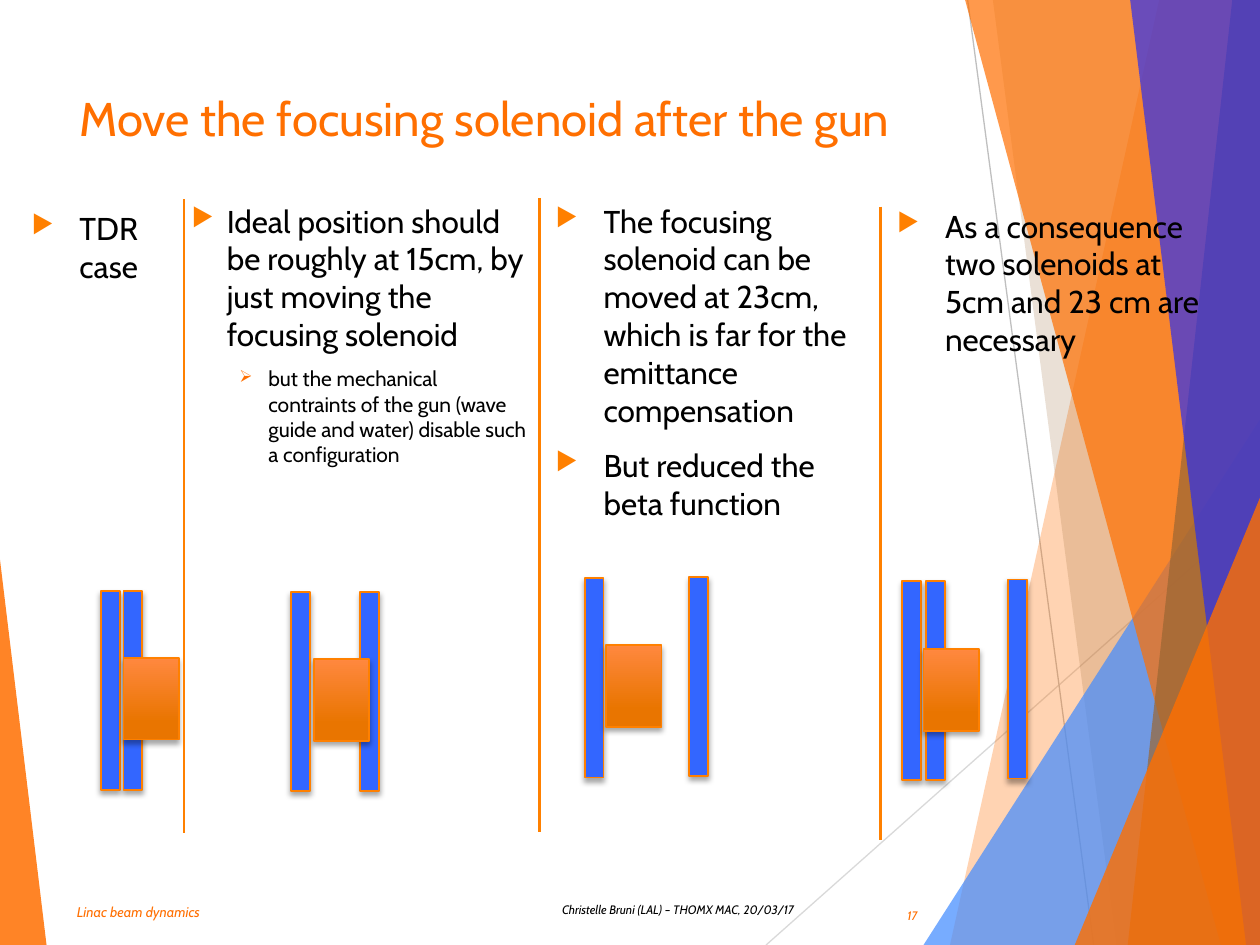
from lxml.etree import SubElement
from pptx import Presentation
from pptx.dml.color import RGBColor
from pptx.enum.shapes import MSO_CONNECTOR, MSO_SHAPE
from pptx.enum.text import MSO_ANCHOR, PP_ALIGN
from pptx.oxml.ns import qn
from pptx.util import Inches, Pt

COLUMNS, ROWS = 100, 75
BLACK = RGBColor(0x00, 0x00, 0x00)
ORANGE = RGBColor(0xFF, 0x6F, 0x00)
ACCENT = RGBColor(0xFF, 0x80, 0x00)
BROWN = RGBColor(0x99, 0x66, 0x33)
SKY = RGBColor(0x43, 0x8C, 0xFF)
INDIGO = RGBColor(0x1F, 0x29, 0xFD)
COIL_BLUE = RGBColor(0x33, 0x66, 0xFF)
GUN_TOP = RGBColor(0xFF, 0x88, 0x3F)
GUN_BOTTOM = RGBColor(0xE9, 0x75, 0x00)
LIGHT_GREY = RGBColor(0xD9, 0xD9, 0xD9)
GREY = RGBColor(0xBF, 0xBF, 0xBF)

# Decorative facets: colour, opacity in percent, corners in grid units
FACETS = [
    (ORANGE, 30, [(92, 0), (75.4, 75), (100, 75), (100, 0)]),
    (BROWN, 20, [(78.8, 0), (88.6, 75), (100, 75), (100, 0)]),
    (SKY, 72, [(73.3, 75), (100, 33.3), (100, 75)]),
    (ORANGE, 70, [(76.6, 0), (96.9, 75), (100, 75), (100, 0)]),
    (BROWN, 70, [(97.8, 0), (89.5, 75), (100, 75), (100, 0)]),
    (INDIGO, 65, [(89.7, 0), (98.9, 75), (100, 75), (100, 0)]),
    (ORANGE, 80, [(85.3, 75), (100, 39.5), (100, 75)]),
    (ORANGE, 85, [(0, 44.4), (3.7, 75), (0, 75)]),
]

# Bullet: sign, colour, text size, left edge, hanging indent, space before
MAIN = ("▶", ACCENT, 18, 3.8, 3.8, 10)
TIGHT = ("▶", ACCENT, 18, 2.8, 2.8, 7.5)
DETAIL = ("➢", ORANGE, 12, 6.1, 2.3, 7.5)

# Panels: text frame, bullets, coil corners, gun corner
PANELS = [
    ((1.8, 16.2, 14.1, 26.4), [(MAIN, "TDR case")],
     [(8, 46.9), (9.8, 46.9)], (9.8, 52.2)),
    ((14.5, 15.6, 28.1, 28.3),
     [(TIGHT, "Ideal position should be roughly at 15cm, by just moving the "
              "focusing solenoid"),
      (DETAIL, "but the mechanical contraints of the gun (wave guide and water) "
               "disable such a configuration")],
     [(23.1, 47), (28.6, 47)], (24.9, 52.3)),
    ((43.4, 15.6, 26.1, 26),
     [(MAIN, "The focusing solenoid can be moved at 23cm, which is far for the "
             "emittance compensation"),
      (MAIN, "But reduced the beta function")],
     [(46.4, 45.9), (54.7, 45.8)], (48.1, 51.2)),
    ((70.5, 16, 26.1, 26),
     [(MAIN, "As a consequence two solenoids at 5cm and 23 cm are necessary")],
     [(71.6, 46.1), (73.5, 46.1), (80, 46)], (73.3, 51.5)),
]
DIVIDERS = [(14.6, 15.8), (42.8, 15.7), (69.9, 16.4)]
DIVIDER_HEIGHT = 50.3
COIL_SIZE = (1.5, 15.8)
GUN_SIZE = (4.4, 6.5)


class SlideBuilder:
    font = "Cabin"

    def __init__(self, presentation):
        self.slide = presentation.slides.add_slide(presentation.slide_layouts[6])
        self.shapes = self.slide.shapes
        self.column = presentation.slide_width / COLUMNS
        self.row = presentation.slide_height / ROWS

    def grid(self, *lengths):
        """Turn alternating column and row lengths into EMU."""
        units = (self.column, self.row)
        return [round(length * units[i % 2]) for i, length in enumerate(lengths)]

    def line(self, start, end, color, width):
        connector = self.shapes.add_connector(
            MSO_CONNECTOR.STRAIGHT, *self.grid(*start, *end))
        connector.line.color.rgb = color
        connector.line.width = Pt(width)
        SubElement(connector._element.spPr, qn("a:effectLst"))

    def facet(self, color, opacity, corners):
        points = [self.grid(*corner) for corner in corners]
        builder = self.shapes.build_freeform(*points[0])
        builder.add_line_segments(points[1:], close=True)
        shape = builder.convert_to_shape()
        shape.shadow.inherit = False
        shape.line.fill.background()
        shape.fill.solid()
        shape.fill.fore_color.rgb = color
        color_node = shape._element.spPr.find(".//" + qn("a:srgbClr"))
        SubElement(color_node, qn("a:alpha"), val=str(opacity * 1000))

    def block(self, corner, size):
        """Add an outlined rectangle with a soft shadow below it."""
        shape = self.shapes.add_shape(MSO_SHAPE.RECTANGLE, *self.grid(*corner, *size))
        shape.line.color.rgb = ACCENT
        shape.line.width = Pt(1)
        shape.shadow.inherit = False
        effects = shape._element.spPr.find(qn("a:effectLst"))
        shadow = SubElement(effects, qn("a:outerShdw"), blurRad=str(Pt(3)),
                            dist=str(Pt(2)), dir="5400000", rotWithShape="0")
        color = SubElement(shadow, qn("a:srgbClr"), val=str(BLACK))
        SubElement(color, qn("a:alpha"), val="35000")
        return shape

    def coil(self, corner):
        shape = self.block(corner, COIL_SIZE)
        shape.fill.solid()
        shape.fill.fore_color.rgb = COIL_BLUE

    def gun(self, corner):
        fill = self.block(corner, GUN_SIZE).fill
        fill.gradient()
        fill.gradient_angle = 270
        stops = zip(fill.gradient_stops, (0, 0.78), (GUN_TOP, GUN_BOTTOM))
        for stop, position, color in stops:
            stop.position = position
            stop.color.rgb = color

    def frame(self, box, anchor=MSO_ANCHOR.TOP):
        text_frame = self.shapes.add_textbox(*self.grid(*box)).text_frame
        text_frame.word_wrap = True
        text_frame.vertical_anchor = anchor
        text_frame.margin_left = text_frame.margin_right = Inches(0.07)
        text_frame.margin_top = text_frame.margin_bottom = Inches(0.04)
        return text_frame

    def run(self, paragraph, text, size, color, italic=False):
        run = paragraph.add_run()
        run.text = text
        run.font.name = self.font
        run.font.size = Pt(size)
        run.font.color.rgb = color
        run.font.italic = italic

    def label(self, box, text, size, color=ORANGE, italic=True,
              align=PP_ALIGN.LEFT, anchor=MSO_ANCHOR.TOP):
        paragraph = self.frame(box, anchor).paragraphs[0]
        paragraph.alignment = align
        self.run(paragraph, text, size, color, italic)

    def bullets(self, box, items):
        text_frame = self.frame(box)
        for index, (style, text) in enumerate(items):
            sign, color, size, left, hanging, space = style
            paragraph = text_frame.add_paragraph() if index else text_frame.paragraphs[0]
            if index:
                paragraph.space_before = Pt(space)
            paragraph.level = 1 if style is DETAIL else 0
            properties = paragraph._p.get_or_add_pPr()
            properties.set("marL", str(self.grid(left)[0]))
            properties.set("indent", str(self.grid(-hanging)[0]))
            bullet_color = SubElement(properties, qn("a:buClr"))
            SubElement(bullet_color, qn("a:srgbClr"), val=str(color))
            SubElement(properties, qn("a:buSzPct"), val="80000")
            SubElement(properties, qn("a:buChar"), char=sign)
            self.run(paragraph, text, size, BLACK)


def main():
    presentation = Presentation()
    presentation.slide_width, presentation.slide_height = Inches(10), Inches(7.5)
    slide = SlideBuilder(presentation)

    slide.line((60.8, 75), (99.9, 40.3), LIGHT_GREY, 0.75)
    slide.line((76.8, 0), (86.8, 75), GREY, 0.75)
    for facet in FACETS:
        slide.facet(*facet)

    slide.label((5.4, 71.3, 21.7, 2.1), "Linac beam dynamics", 8)
    slide.label((35.1, 71.2, 28.6, 1.9), "Christelle Bruni (LAL) – THOMX MAC, 20/03/17",
                7, BLACK, align=PP_ALIGN.RIGHT)
    slide.label((68.9, 71, 4.6, 3.4), "17", 7, align=PP_ALIGN.RIGHT,
                anchor=MSO_ANCHOR.MIDDLE)
    slide.label((5.6, 6.7, 70.5, 7.6), "Move the focusing solenoid after the gun",
                27, italic=False)

    for text_box, items, coils, gun in PANELS:
        slide.bullets(text_box, items)
        for coil in coils:
            slide.coil(coil)
        slide.gun(gun)
    for x, top in DIVIDERS:
        slide.line((x, top), (x, top + DIVIDER_HEIGHT), ACCENT, 1.5)

    presentation.save("out.pptx")


if __name__ == "__main__":
    main()
